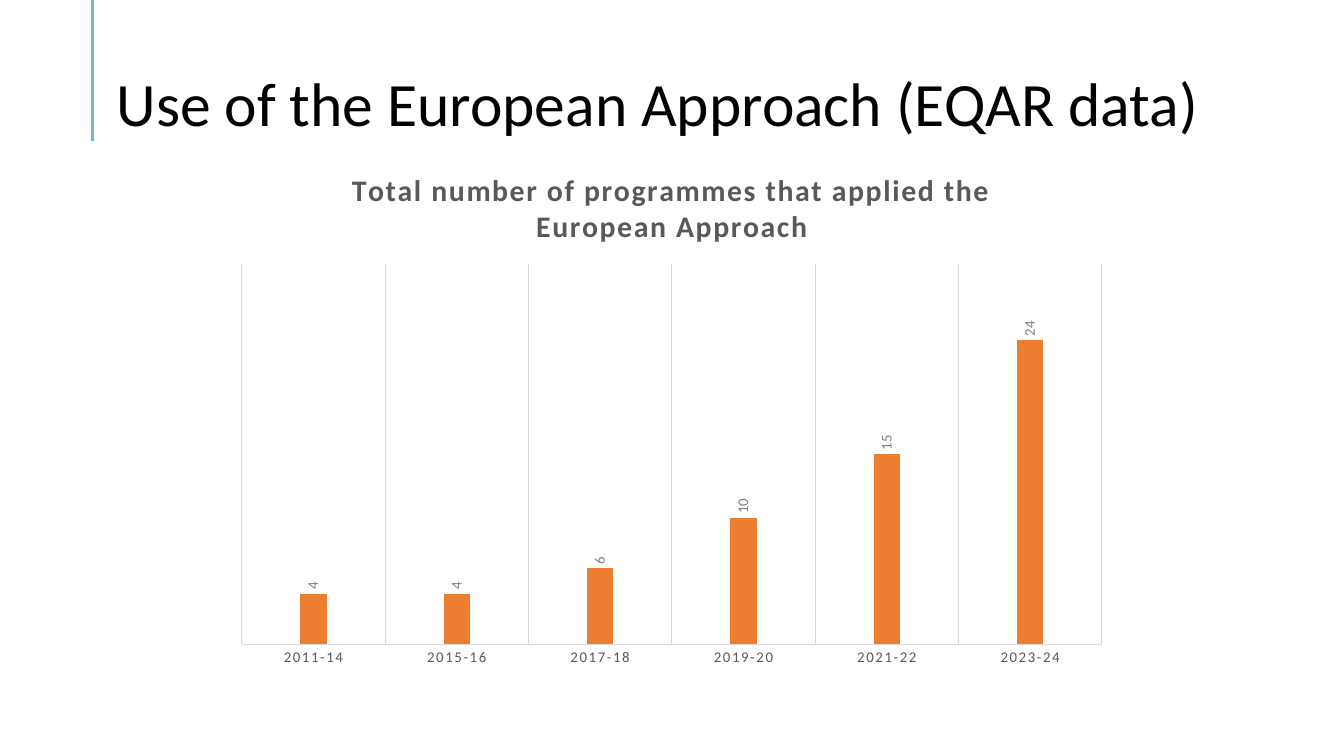
from typing import NamedTuple

from lxml.etree import SubElement
from pptx import Presentation
from pptx.chart.chart import Chart
from pptx.chart.data import CategoryChartData
from pptx.dml.color import RGBColor
from pptx.enum.chart import XL_CHART_TYPE, XL_LABEL_POSITION, XL_TICK_LABEL_POSITION, XL_TICK_MARK
from pptx.enum.shapes import MSO_CONNECTOR
from pptx.enum.text import MSO_ANCHOR
from pptx.oxml import parse_xml
from pptx.oxml.ns import nsdecls, qn
from pptx.slide import Slide
from pptx.text.text import Font
from pptx.util import Cm, Pt

FACE = "Calibri"
BLACK = RGBColor(0x00, 0x00, 0x00)
TEAL = RGBColor(0x71, 0xBB, 0xBE)
ORANGE = RGBColor(0xED, 0x7D, 0x31)
DARK = RGBColor(0x59, 0x59, 0x59)
GRAY = RGBColor(0x80, 0x80, 0x80)
PALE = RGBColor(0xD9, 0xD9, 0xD9)
TOPIC = "Total number of programmes that applied the European Approach"


class Period(NamedTuple):
    years: str
    count: int


PERIODS = [
    Period("2011-14", 4),
    Period("2015-16", 4),
    Period("2017-18", 6),
    Period("2019-20", 10),
    Period("2021-22", 15),
    Period("2023-24", 24),
]


def style(font: Font, size: float, color: RGBColor, bold: bool = False, space: int = 0) -> None:
    font.name = FACE
    font.size = Pt(size)
    font.bold = bold
    font.color.rgb = color
    if space:
        font._element.set("spc", str(space))


def add_rule(slide: Slide) -> None:
    rule = slide.shapes.add_connector(MSO_CONNECTOR.STRAIGHT, Cm(2.34), Cm(0), Cm(2.34), Cm(3.56))
    rule.line.color.rgb = TEAL
    rule.line.width = Pt(2.25)
    SubElement(rule._element.spPr, qn("a:effectLst"))


def add_title(slide: Slide) -> None:
    frame = slide.shapes.add_textbox(Cm(2.69), Cm(1.35), Cm(29.21), Cm(2.18)).text_frame
    frame.word_wrap = True
    frame.vertical_anchor = MSO_ANCHOR.BOTTOM
    frame.margin_bottom = Cm(0)
    line = frame.paragraphs[0]
    line.line_spacing = 0.9
    run = line.add_run()
    run.text = "Use of the European Approach (EQAR data)"
    style(run.font, 44, BLACK)


def place_plot(chart: Chart) -> None:
    plot = chart._chartSpace.chart.plotArea
    for old in plot.findall(qn("c:layout")):
        plot.remove(old)
    plot.insert(0, parse_xml(
        f'<c:layout {nsdecls("c")}><c:manualLayout><c:layoutTarget val="inner"/>'
        '<c:xMode val="edge"/><c:yMode val="edge"/><c:x val="0.02"/><c:y val="0.22"/>'
        '<c:w val="0.96"/><c:h val="0.72"/></c:manualLayout></c:layout>'
    ))


def set_axes(chart: Chart) -> None:
    base = chart.category_axis
    base.major_tick_mark = base.minor_tick_mark = XL_TICK_MARK.NONE
    base.tick_label_position = XL_TICK_LABEL_POSITION.NEXT_TO_AXIS
    base.has_major_gridlines = True
    for line in (base.format.line, base.major_gridlines.format.line):
        line.color.rgb = PALE
        line.width = Pt(0.75)
    style(base.tick_labels.font, 10.6, DARK, space=120)
    scale = chart.value_axis
    scale.minimum_scale = 0
    scale.maximum_scale = 30
    scale.has_major_gridlines = False
    scale.visible = False


def add_bars(slide: Slide) -> None:
    data = CategoryChartData()
    data.categories = [period.years for period in PERIODS]
    data.add_series(TOPIC, [period.count for period in PERIODS])
    chart = slide.shapes.add_chart(
        XL_CHART_TYPE.COLUMN_CLUSTERED, Cm(5.64), Cm(3.73), Cm(22.58), Cm(13.31), data
    ).chart
    style(chart.font, 10, BLACK)
    chart.has_legend = False
    chart.has_title = True
    run = chart.chart_title.text_frame.paragraphs[0].add_run()
    run.text = TOPIC
    style(run.font, 21.3, DARK, bold=True, space=130)
    chart.chart_title.include_in_layout = False
    place_plot(chart)
    set_axes(chart)

    plot = chart.plots[0]
    plot.gap_width = 444
    plot.overlap = -90
    plot.vary_by_categories = False
    bars = plot.series[0]
    bars.format.fill.solid()
    bars.format.fill.fore_color.rgb = ORANGE
    labels = bars.data_labels
    labels.show_value = True
    labels.position = XL_LABEL_POSITION.OUTSIDE_END
    style(labels.font, 10.6, GRAY)
    body = labels._element.find(qn("c:txPr")).find(qn("a:bodyPr"))
    body.set("rot", "-5400000")
    body.set("vert", "horz")


def main() -> None:
    deck = Presentation()
    deck.slide_width = Cm(33.87)
    deck.slide_height = Cm(19.05)
    slide = deck.slides.add_slide(deck.slide_layouts[6])
    add_rule(slide)
    add_title(slide)
    add_bars(slide)
    deck.save("out.pptx")


if __name__ == "__main__":
    main()
